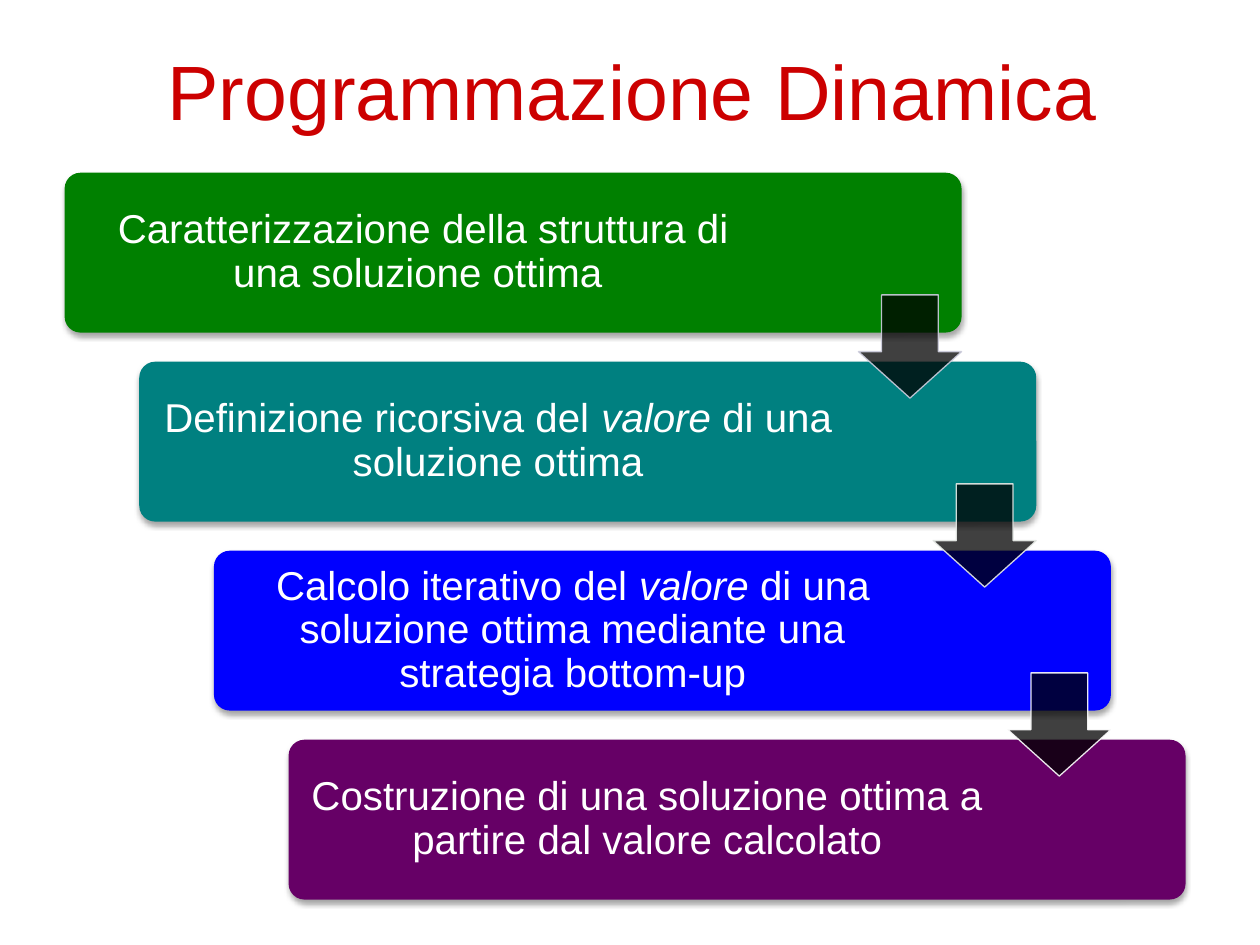
from lxml import etree
from pptx import Presentation
from pptx.dml.color import RGBColor
from pptx.enum.shapes import MSO_SHAPE
from pptx.enum.text import MSO_ANCHOR, MSO_AUTO_SIZE, PP_ALIGN
from pptx.oxml import parse_xml
from pptx.oxml.ns import nsdecls, qn
from pptx.util import Pt

ROUNDED, ARROW = MSO_SHAPE.ROUNDED_RECTANGLE, MSO_SHAPE.DOWN_ARROW
MIDDLE, CENTER, NO_FIT = MSO_ANCHOR.MIDDLE, PP_ALIGN.CENTER, MSO_AUTO_SIZE.NONE
TITLE_ONLY = 5
FONT = "Arial"
RED = RGBColor(0xCC, 0x00, 0x00)
GREEN = RGBColor(0x00, 0x80, 0x00)
TEAL = RGBColor(0x00, 0x80, 0x80)
BLUE = RGBColor(0x00, 0x00, 0xFF)
PURPLE = RGBColor(0x66, 0x00, 0x66)
BLACK = RGBColor(0x00, 0x00, 0x00)
WHITE = RGBColor(0xFF, 0xFF, 0xFF)
ARROW_LINES = [RGBColor(0xCE, 0xCE, 0xDE), RGBColor(0xE8, 0xEC, 0xE8), WHITE]

STEPS = [
    (GREEN, ["Caratterizzazione della struttura di una soluzione ottima "]),
    (TEAL, ["Definizione ricorsiva del ", "valore", " di una soluzione ottima"]),
    (BLUE, ["Calcolo iterativo del ", "valore",
            " di una soluzione ottima mediante una strategia bottom-up"]),
    (PURPLE, ["Costruzione di una soluzione ottima a partire dal valore calcolato"]),
]
STEP_W, STEP_H = 512.6, 91.4
TEXT_W, TEXT_INSET = 405, 2.7
ARROW_SIZE, ARROW_DROP = 59, 69.8


def style_run(r, size, color):
    """Set the font, size and colour of a run."""
    r.font.name = FONT
    r.font.size = Pt(size)
    r.font.color.rgb = color


def set_alpha(fill_parent, percent):
    """Make the solid fill below an element partly transparent."""
    color = fill_parent.find(qn("a:solidFill"))[0]
    etree.SubElement(color, qn("a:alpha")).set("val", str(percent * 1000))


def add_soft_shadow(s):
    """Give a shape a soft shadow that falls straight down."""
    s.shadow.inherit = False
    s.element.spPr.find(qn("a:effectLst")).append(parse_xml(
        f'<a:outerShdw {nsdecls("a")} blurRad="{Pt(3.1)}" dist="{Pt(1.8)}" '
        'dir="5400000" rotWithShape="0"><a:srgbClr val="000000">'
        '<a:alpha val="35000"/></a:srgbClr></a:outerShdw>'))


def place_title(slide, left, top, width, height):
    """Fill and place the title placeholder."""
    title = slide.shapes.title
    title.left, title.top = Pt(left), Pt(top)
    title.width, title.height = Pt(width), Pt(height)
    tf = title.text_frame
    tf.text = "Programmazione Dinamica "
    tf.auto_size = NO_FIT
    tf.vertical_anchor = MIDDLE
    p = tf.paragraphs[0]
    p.alignment = CENTER
    style_run(p.runs[0], 44, RED)


def add_step(shapes, left, top, color, parts):
    """Add a coloured step with its text; every second part is italic."""
    s = shapes.add_shape(ROUNDED, Pt(left), Pt(top), Pt(STEP_W), Pt(STEP_H))
    s.adjustments[0] = 0.1
    s.fill.solid()
    s.fill.fore_color.rgb = color
    s.line.fill.background()
    add_soft_shadow(s)

    box = shapes.add_textbox(Pt(left + TEXT_INSET), Pt(top + TEXT_INSET),
                             Pt(TEXT_W), Pt(STEP_H - 2 * TEXT_INSET))
    tf = box.text_frame
    tf.word_wrap = True
    tf.vertical_anchor = MIDDLE
    tf.margin_left = tf.margin_right = tf.margin_top = tf.margin_bottom = Pt(7)
    p = tf.paragraphs[0]
    p.alignment = CENTER
    p.line_spacing = 0.9
    for i, part in enumerate(parts):
        r = p.add_run()
        r.text = part
        r.font.italic = i % 2 == 1
        style_run(r, 23, WHITE)


def add_arrow(shapes, left, top, line_color):
    """Add a translucent arrow pointing to the next step."""
    s = shapes.add_shape(ARROW, Pt(left), Pt(top), Pt(ARROW_SIZE), Pt(ARROW_SIZE))
    s.adjustments[0], s.adjustments[1] = 0.55, 0.45
    s.shadow.inherit = False
    s.fill.solid()
    s.fill.fore_color.rgb = BLACK
    s.line.color.rgb = line_color
    s.line.width = Pt(0.75)
    set_alpha(s.element.spPr, 75)
    set_alpha(s.element.spPr.find(qn("a:ln")), 90)


def place_staircase(slide, left, top, width, height):
    """Spread the steps diagonally over a box, with arrows between them."""
    shapes = slide.shapes.add_group_shape().shapes
    gaps = len(STEPS) - 1
    dx, dy = (width - STEP_W) / gaps, (height - STEP_H) / gaps
    for i, (color, parts) in enumerate(STEPS):
        add_step(shapes, left + i * dx, top + i * dy, color, parts)
    for i, line_color in enumerate(ARROW_LINES):
        add_arrow(shapes, left + i * dx + STEP_W - ARROW_SIZE,
                  top + i * dy + ARROW_DROP, line_color)


def main():
    """Build the slide and save it."""
    prs = Presentation()
    prs.slide_width, prs.slide_height = Pt(720), Pt(540)
    slide = prs.slides.add_slide(prs.slide_layouts[TITLE_ONLY])
    place_title(slide, 54, 24, 627, 54)
    place_staircase(slide, 36.9, 98.7, 640.6, 415.4)
    prs.save("out.pptx")


if __name__ == "__main__":
    main()
